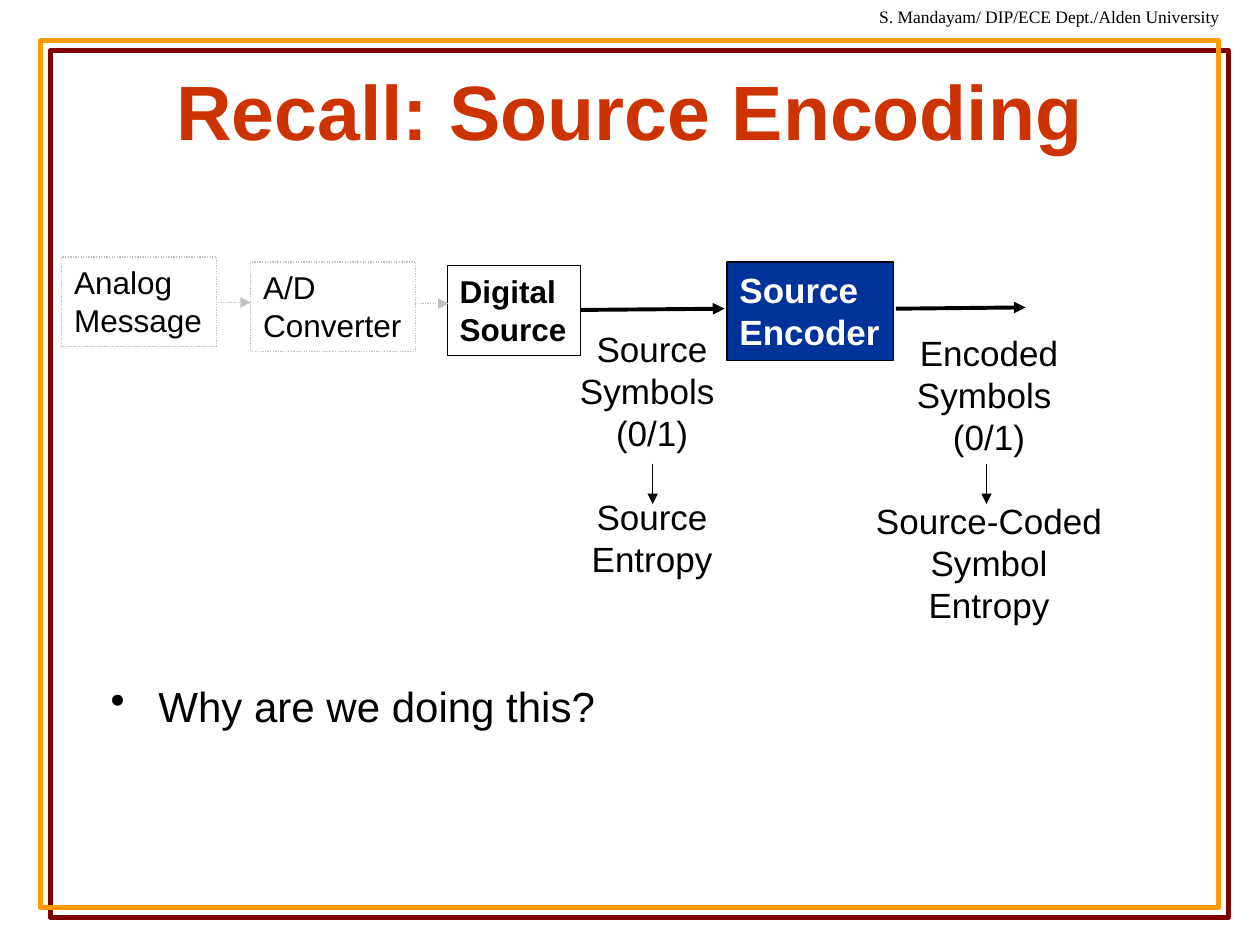
from lxml.etree import SubElement
from pptx import Presentation
from pptx.dml.color import RGBColor
from pptx.enum.dml import MSO_LINE
from pptx.enum.shapes import MSO_CONNECTOR, MSO_SHAPE
from pptx.enum.text import MSO_ANCHOR, PP_ALIGN
from pptx.oxml.ns import qn
from pptx.util import Inches, Pt

BLACK = RGBColor(0x00, 0x00, 0x00)
WHITE = RGBColor(0xFF, 0xFF, 0xFF)
ORANGE = RGBColor(0xFF, 0x99, 0x00)
MAROON = RGBColor(0x80, 0x00, 0x00)
RUST = RGBColor(0xCC, 0x33, 0x00)
NAVY = RGBColor(0x00, 0x33, 0x99)
GRAY = RGBColor(0xC0, 0xC0, 0xC0)


def write(frame, lines, size=20, font="Arial", color=BLACK, bold=False,
          align=PP_ALIGN.LEFT, anchor=MSO_ANCHOR.TOP, wrap=False):
    frame.word_wrap = wrap
    frame.vertical_anchor = anchor
    for index, line in enumerate(lines):
        paragraph = frame.add_paragraph() if index else frame.paragraphs[0]
        paragraph.alignment = align
        run = paragraph.add_run()
        run.text = line
        run.font.size = Pt(size)
        run.font.name = font
        run.font.bold = bold
        run.font.color.rgb = color
    return frame.paragraphs


def add_text(slide, left, top, width, height, lines, **text_format):
    box = slide.shapes.add_textbox(Inches(left), Inches(top), Inches(width), Inches(height))
    return write(box.text_frame, lines, **text_format)


def style_line(line, color, width, dotted=False):
    line.color.rgb = color
    line.width = Pt(width)
    if dotted:
        line.dash_style = MSO_LINE.ROUND_DOT


def add_rectangle(slide, left, top, width, height, line=BLACK, line_width=0.75,
                  dotted=False, fill=None):
    rectangle = slide.shapes.add_shape(
        MSO_SHAPE.RECTANGLE, Inches(left), Inches(top), Inches(width), Inches(height))
    rectangle.shadow.inherit = False
    if fill is None:
        rectangle.fill.background()
    else:
        rectangle.fill.solid()
        rectangle.fill.fore_color.rgb = fill
    style_line(rectangle.line, line, line_width, dotted)
    return rectangle


def add_arrow(slide, start, end, color=BLACK, width=0.75, dotted=False):
    arrow = slide.shapes.add_connector(
        MSO_CONNECTOR.STRAIGHT, *(Inches(value) for value in start + end))
    style_line(arrow.line, color, width, dotted)
    SubElement(arrow.line._get_or_add_ln(), qn("a:tailEnd"), type="triangle")
    SubElement(arrow._element.spPr, qn("a:effectLst"))


def add_title(slide, text):
    title = slide.shapes.title
    title.left, title.top = Inches(0.75), Inches(0.67)
    title.width, title.height = Inches(8.5), Inches(0.4)
    write(title.text_frame, [text], size=44, color=RUST, bold=True,
          align=PP_ALIGN.CENTER, anchor=MSO_ANCHOR.MIDDLE, wrap=True)


def add_bullet(slide, text):
    question = add_text(slide, 0.78, 5.35, 8.5, 0.96, [text], size=24, wrap=True)[0]
    question.space_before = Pt(4.8)
    properties = question._p.get_or_add_pPr()
    properties.set("marL", str(Inches(0.38)))
    properties.set("indent", str(-Inches(0.38)))
    SubElement(properties, qn("a:buChar"), char="•")


def add_symbols_note(slide, left, top, width, height, symbols, entropy):
    """Symbol lines, then the entropy they lead to, one line's gap lower."""
    paragraphs = add_text(slide, left, top, width, height, symbols + entropy,
                          align=PP_ALIGN.CENTER)
    paragraphs[len(symbols)].space_before = Pt(24)


def main():
    presentation = Presentation()
    presentation.slide_width, presentation.slide_height = Inches(10), Inches(7.5)
    slide = presentation.slides.add_slide(presentation.slide_layouts[5])

    for offset, color in ((0.08, MAROON), (0, ORANGE)):
        add_rectangle(slide, 0.32 + offset, 0.32 + offset, 9.35, 6.88,
                      line=color, line_width=3)
    add_text(slide, 6.88, 0, 2.97, 0.27, ["S. Mandayam/ DIP/ECE Dept./Alden University"],
             size=10, font="Times New Roman")
    add_title(slide, "Recall: Source Encoding")
    add_bullet(slide, "Why are we doing this?")

    faint = {"line": GRAY, "dotted": True}
    stages = [
        (0.49, 2.04, 1.23, 0.71, ["Analog", "Message"], faint, {"size": 18}),
        (1.99, 2.08, 1.31, 0.71, ["A/D", "Converter"], faint, {"size": 18}),
        (3.55, 2.11, 1.06, 0.71, ["Digital", "Source"], {}, {"size": 18, "bold": True}),
        (5.77, 2.08, 1.32, 0.78, ["Source", "Encoder"], {"fill": NAVY},
         {"color": WHITE, "bold": True}),
    ]
    for left, top, width, height, lines, box_style, text_format in stages:
        stage = add_rectangle(slide, left, top, width, height, **box_style)
        write(stage.text_frame, lines, **text_format)

    for start, end in (((1.73, 2.4), (1.99, 2.4)), ((3.29, 2.41), (3.56, 2.41))):
        add_arrow(slide, start, end, color=GRAY, dotted=True)
    for start, end in (((4.61, 2.46), (5.75, 2.45)), ((7.11, 2.45), (8.14, 2.44))):
        add_arrow(slide, start, end, width=2.25)
    for x in (5.18, 7.83):
        add_arrow(slide, (x, 3.68), (x, 4))

    add_symbols_note(slide, 4.12, 2.55, 2.11, 1.77,
                     ["Source", "Symbols ", "(0/1)"], ["Source", "Entropy"])
    add_symbols_note(slide, 6.77, 2.58, 2.16, 2.1,
                     ["Encoded", "Symbols ", "(0/1)"], ["Source-Coded", "Symbol Entropy"])

    presentation.save("out.pptx")


if __name__ == "__main__":
    main()
